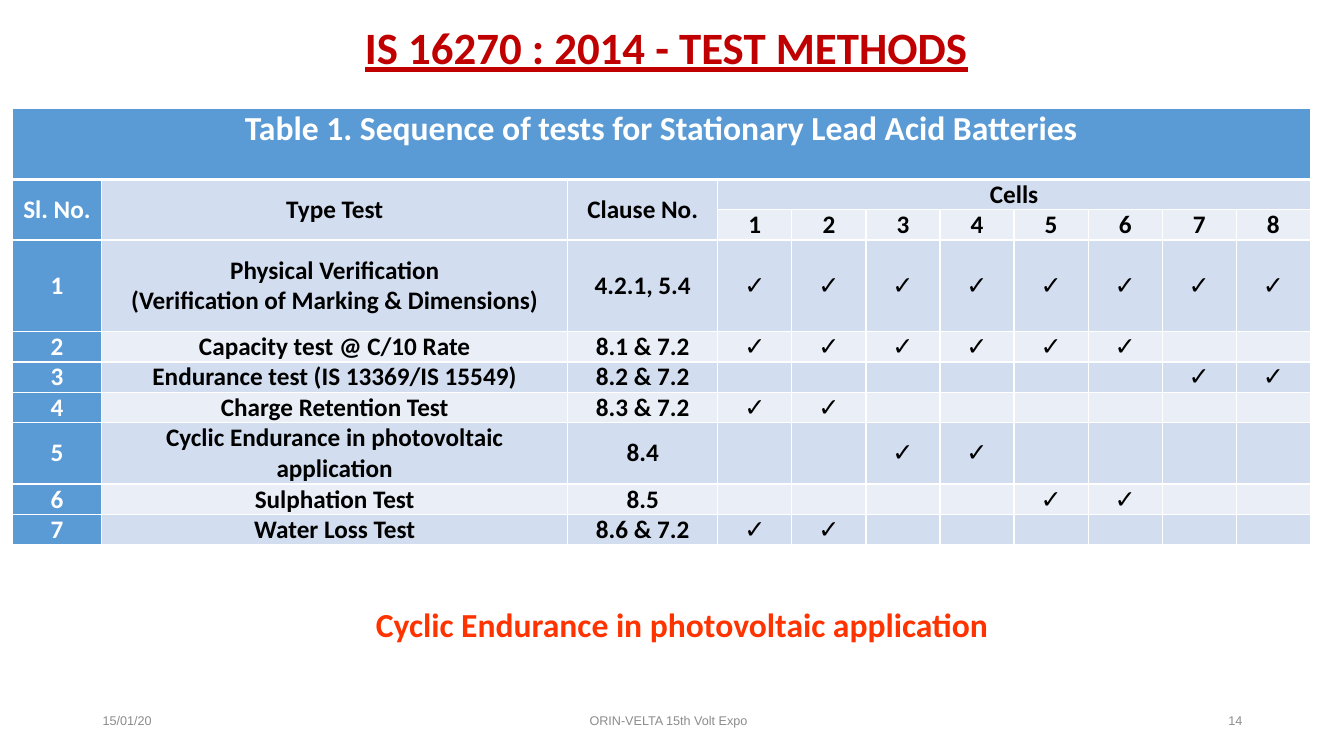
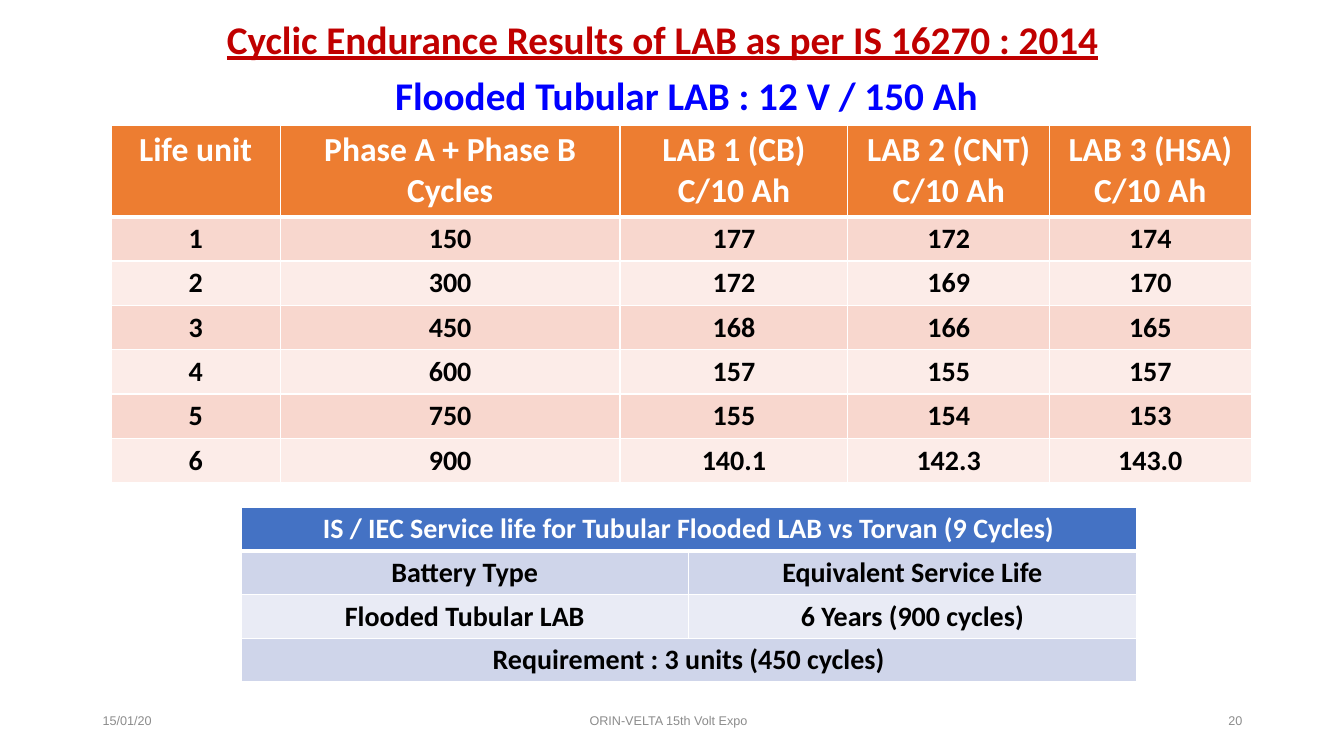
from lxml import etree
from pptx import Presentation
from pptx.dml.color import RGBColor
from pptx.enum.text import MSO_ANCHOR, PP_ALIGN
from pptx.oxml.ns import qn
from pptx.util import Inches, Pt

WHITE = RGBColor(0xFF, 0xFF, 0xFF)
BLACK = RGBColor(0, 0, 0)
GREY = RGBColor(0x8C, 0x8C, 0x8C)
DARK_RED = RGBColor(0xC0, 0, 0)
ORANGE_RED = RGBColor(0xFF, 0x33, 0)
PURE_BLUE = RGBColor(0, 0, 0xFF)

# Header fill, odd row fill, even row fill
SKY = (RGBColor(0x5B, 0x9B, 0xD5), RGBColor(0xD2, 0xDE, 0xEF), RGBColor(0xEA, 0xEF, 0xF7))
ORANGE = (RGBColor(0xED, 0x7D, 0x31), RGBColor(0xF8, 0xD7, 0xCE), RGBColor(0xFC, 0xEC, 0xE8))
BLUE = (RGBColor(0x44, 0x72, 0xC4), RGBColor(0xCF, 0xD5, 0xEA), RGBColor(0xE9, 0xEB, 0xF5))

FOOTER_DATE = "15/01/20"
FOOTER_EVENT = "ORIN-VELTA 15th Volt Expo"

CELL_COUNT = 8
TYPE_TESTS = [  # test, clause, cells that take it
    ("Physical Verification\n(Verification of Marking & Dimensions)", "4.2.1, 5.4", range(1, 9)),
    ("Capacity test @ C/10 Rate", "8.1 & 7.2", range(1, 7)),
    ("Endurance test (IS 13369/IS 15549)", "8.2 & 7.2", (7, 8)),
    ("Charge Retention Test", "8.3 & 7.2", (1, 2)),
    ("Cyclic Endurance in photovoltaic application", "8.4", (3, 4)),
    ("Sulphation Test", "8.5", (5, 6)),
    ("Water Loss Test", "8.6 & 7.2", (1, 2)),
]
CYCLE_RESULTS = [
    ("Life unit", "Phase A + Phase B Cycles", "LAB 1 (CB)\nC/10 Ah",
     "LAB 2 (CNT)\nC/10 Ah", "LAB 3 (HSA)\nC/10 Ah"),
    ("1", "150", "177", "172", "174"),
    ("2", "300", "172", "169", "170"),
    ("3", "450", "168", "166", "165"),
    ("4", "600", "157", "155", "157"),
    ("5", "750", "155", "154", "153"),
    ("6", "900", "140.1", "142.3", "143.0"),
]
SERVICE_LIFE = [
    ("IS / IEC Service life for Tubular Flooded LAB vs Torvan (9 Cycles)", ""),
    ("Battery Type", "Equivalent Service Life"),
    ("Flooded Tubular LAB", "6 Years (900 cycles)"),
    ("Requirement : 3 units (450 cycles)", ""),
]


def write(frame, text, size=18, color=BLACK, font="Calibri", bold=True,
          underline=False, align=PP_ALIGN.CENTER, spacing=1.0):
    for number, line in enumerate(text.split("\n")):
        paragraph = frame.add_paragraph() if number else frame.paragraphs[0]
        paragraph.alignment = align
        paragraph.line_spacing = spacing
        run = paragraph.add_run()
        run.text = line
        run.font.size = Pt(size)
        run.font.name = font
        run.font.bold = bold
        run.font.underline = underline
        run.font.color.rgb = color


def add_text(slide, text, left, top, width, height, anchor=MSO_ANCHOR.MIDDLE, **style):
    frame = slide.shapes.add_textbox(*map(Inches, (left, top, width, height))).text_frame
    frame.word_wrap = True
    frame.vertical_anchor = anchor
    write(frame, text, **style)


def add_slide(deck, title, number, title_box, title_size):
    slide = deck.slides.add_slide(deck.slide_layouts[6])
    add_text(slide, title, *title_box, size=title_size, color=DARK_RED,
             underline=True, spacing=0.9)
    for text, left, width, align in (
        (FOOTER_DATE, 0.92, 3, PP_ALIGN.LEFT),
        (FOOTER_EVENT, 4.38, 4.5, PP_ALIGN.CENTER),
        (str(number), 9.42, 3, PP_ALIGN.RIGHT),
    ):
        add_text(slide, text, left, 6.95, width, 0.4, size=9, color=GREY,
                 font="Arial", bold=False, align=align)
    return slide


def add_borders(cell, top=1, bottom=1):
    properties = cell._tc.get_or_add_tcPr()
    for side, width in (("L", 1), ("R", 1), ("T", top), ("B", bottom)):
        line = etree.SubElement(properties, qn(f"a:ln{side}"), w=str(Pt(width)))
        fill = etree.SubElement(line, qn("a:solidFill"))
        etree.SubElement(fill, qn("a:srgbClr"), val=str(WHITE))


def add_banded_table(slide, rows, left, top, widths, heights, palette, merges=(),
                     header_size=20, body_size=20, header_column=False,
                     margins=(0.1, 0.05), body_anchor=MSO_ANCHOR.TOP):
    """Merges are (first row, first column, last row, last column)."""
    header_fill, *bands = palette
    table = slide.shapes.add_table(
        len(rows), len(widths), Inches(left), Inches(top),
        Inches(sum(widths)), Inches(sum(heights))).table
    for column, width in zip(table.columns, widths):
        column.width = Inches(width)
    for row, height in zip(table.rows, heights):
        row.height = Inches(height)
    for r, texts in enumerate(rows):
        for c, text in enumerate(texts):
            cell = table.cell(r, c)
            is_header = r == 0 or (header_column and c == 0)
            cell.margin_left = cell.margin_right = Inches(margins[0])
            cell.margin_top = cell.margin_bottom = Inches(margins[1])
            cell.vertical_anchor = body_anchor if r else MSO_ANCHOR.TOP
            add_borders(cell, top=3 if r == 1 else 1, bottom=1 if r else 3)
            cell.fill.solid()
            cell.fill.fore_color.rgb = header_fill if is_header else bands[(r - 1) % 2]
            if text:
                write(cell.text_frame, text, size=body_size if r else header_size,
                      color=WHITE if is_header else BLACK)
    for r1, c1, r2, c2 in merges:
        table.cell(r1, c1).merge(table.cell(r2, c2))


def type_test_rows():
    cells = range(1, CELL_COUNT + 1)
    blanks = [""] * (CELL_COUNT - 1)
    rows = [
        ["Table 1. Sequence of tests for Stationary Lead Acid Batteries", "", "", "", *blanks],
        ["Sl. No.", "Type Test", "Clause No.", "Cells", *blanks],
        ["", "", "", *map(str, cells)],
    ]
    for number, (test, clause, tested) in enumerate(TYPE_TESTS, 1):
        rows.append([str(number), test, clause, *("✓" if c in tested else "" for c in cells)])
    return rows


def build_test_methods(deck):
    slide = add_slide(deck, "IS 16270 : 2014 - TEST METHODS", 14, (0.86, 0.22, 11.5, 0.56), 32)
    last = 2 + CELL_COUNT
    add_banded_table(
        slide, type_test_rows(), 0.12, 1.08,
        [0.89, 4.62, 1.49] + [0.735] * CELL_COUNT,
        [0.7, 0.3, 0.3, 0.91, 0.3, 0.3, 0.3, 0.61, 0.3, 0.3], SKY,
        merges=[(0, 0, 0, last), (1, 3, 1, last)] + [(1, c, 2, c) for c in range(3)],
        header_size=24, body_size=18, header_column=True,
        margins=(0.07, 0), body_anchor=MSO_ANCHOR.MIDDLE)
    add_text(slide, "Cyclic Endurance in photovoltaic application", 3.5, 5.94, 6.53, 0.5,
             size=24, color=ORANGE_RED, anchor=MSO_ANCHOR.TOP)


def build_endurance_results(deck):
    slide = add_slide(deck, "Cyclic Endurance Results of LAB as per IS 16270 : 2014", 20,
                      (0.82, -0.01, 11.5, 0.84), 28)
    add_banded_table(slide, CYCLE_RESULTS, 1.1, 1.24, [1.68, 3.37, 2.26, 2, 2],
                     [0.91] + [0.44] * 6, ORANGE, header_size=24)
    add_text(slide, "Flooded Tubular LAB : 12 V / 150 Ah", 3.82, 0.66, 6.14, 0.57,
             size=28, color=PURE_BLUE, align=PP_ALIGN.LEFT, anchor=MSO_ANCHOR.TOP)
    add_banded_table(slide, SERVICE_LIFE, 2.39, 5.03, [4.44] * 2, [0.43] * 4, BLUE,
                     merges=[(0, 0, 0, 1), (3, 0, 3, 1)])


def main():
    deck = Presentation()
    deck.slide_width, deck.slide_height = Inches(13.33), Inches(7.5)
    build_test_methods(deck)
    build_endurance_results(deck)
    deck.save("out.pptx")


if __name__ == "__main__":
    main()
